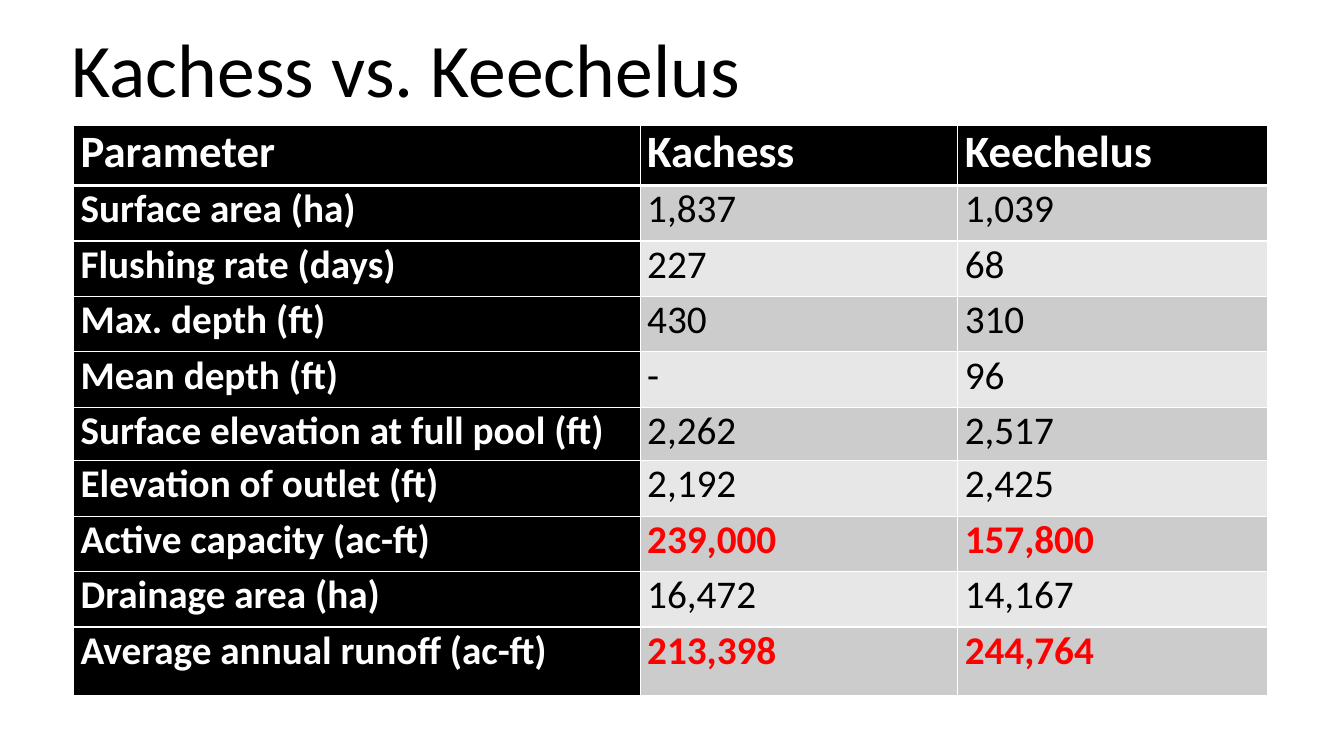
from dataclasses import dataclass

from lxml import etree
from pptx import Presentation
from pptx.dml.color import RGBColor
from pptx.enum import text
from pptx.oxml import ns
from pptx.util import Inches, Pt


@dataclass(frozen=True)
class Theme:
    font: str = "Calibri"
    black: str = "000000"
    white: str = "FFFFFF"
    red: str = "FF0000"
    bands: tuple = ("CCCCCC", "E7E7E7")
    title_size: int = 54
    header_size: int = 32
    body_size: int = 28
    thin: int = 1
    thick: int = 3


THEME = Theme()
HEADER = ("Parameter", "Kachess", "Keechelus")
LAKE_DATA = [
    ("Surface area (ha)", "1,837", "1,039"),
    ("Flushing rate (days)", "227", "68"),
    ("Max. depth (ft)", "430", "310"),
    ("Mean depth (ft)", "-", "96"),
    ("Surface elevation at full pool (ft)", "2,262", "2,517"),
    ("Elevation of outlet (ft)", "2,192", "2,425"),
    ("Active capacity (ac-ft)", "239,000", "157,800"),
    ("Drainage area (ha)", "16,472", "14,167"),
    ("Average annual runoff (ac-ft)", "213,398", "244,764"),
]
HIGHLIGHTED = {"Active capacity (ac-ft)", "Average annual runoff (ac-ft)"}
COLUMN_WIDTHS = (5.62, 3.15, 3.07)
ROW_HEIGHTS = (0.6, 0.55, 0.55, 0.55, 0.55, 0.53, 0.55, 0.55, 0.55, 0.68)


def add_run(p, wording, size, color, bold=False):
    r = p.add_run()
    r.text = wording
    r.font.name = THEME.font
    r.font.size = Pt(size)
    r.font.bold = bold
    r.font.color.rgb = RGBColor.from_string(color)


def set_borders(cell, top, bottom):
    """Draw white cell edges; call before filling, as the schema wants lines first."""
    tc_pr = cell._tc.get_or_add_tcPr()
    widths = {"L": THEME.thin, "R": THEME.thin, "T": top, "B": bottom}
    for side, width in widths.items():
        ln = etree.SubElement(tc_pr, ns.qn(f"a:ln{side}"), w=str(Pt(width)))
        fill = etree.SubElement(ln, ns.qn("a:solidFill"))
        etree.SubElement(fill, ns.qn("a:srgbClr"), val=THEME.white)


def add_title(s, wording, left, top, width, height):
    sp = s.shapes.title
    sp.left, sp.top, sp.width, sp.height = map(Inches, (left, top, width, height))
    tf = sp.text_frame
    tf.auto_size = text.MSO_AUTO_SIZE.NONE
    tf.vertical_anchor = text.MSO_ANCHOR.MIDDLE
    p = tf.paragraphs[0]
    p.alignment = text.PP_ALIGN.LEFT
    p.line_spacing = 0.9
    add_run(p, wording, THEME.title_size, THEME.black)


def fill_cell(cell, wording, row, col, highlighted):
    is_header, is_label = row == 0, col == 0
    set_borders(cell,
                top=THEME.thick if row == 1 else THEME.thin,
                bottom=THEME.thick if is_header else THEME.thin)
    dark = is_header or is_label
    cell.fill.solid()
    cell.fill.fore_color.rgb = RGBColor.from_string(
        THEME.black if dark else THEME.bands[(row - 1) % 2])
    cell.margin_left = cell.margin_right = Inches(0.07)
    cell.margin_top = cell.margin_bottom = 0

    p = cell.text_frame.paragraphs[0]
    p.alignment = text.PP_ALIGN.JUSTIFY if is_label else text.PP_ALIGN.LEFT
    color = THEME.white if dark else THEME.red if highlighted else THEME.black
    size = THEME.header_size if is_header else THEME.body_size
    add_run(p, wording, size, color, bold=dark or highlighted)


def add_lake_table(s, left, top):
    rows = [HEADER, *LAKE_DATA]
    box = (left, top, sum(COLUMN_WIDTHS), sum(ROW_HEIGHTS))
    table = s.shapes.add_table(len(rows), len(HEADER), *map(Inches, box)).table
    for column, width in zip(table.columns, COLUMN_WIDTHS):
        column.width = Inches(width)
    for i, (values, height) in enumerate(zip(rows, ROW_HEIGHTS)):
        table.rows[i].height = Inches(height)
        for j, value in enumerate(values):
            fill_cell(table.cell(i, j), value, i, j, values[0] in HIGHLIGHTED)


def main():
    prs = Presentation()
    prs.slide_width, prs.slide_height = Inches(13.33), Inches(7.5)
    s = prs.slides.add_slide(prs.slide_layouts.get_by_name("Title Only"))
    add_title(s, "Kachess vs. Keechelus", 0.61, 0, 11.5, 1.45)
    add_lake_table(s, 0.73, 1.24)
    prs.save("out.pptx")


if __name__ == "__main__":
    main()
